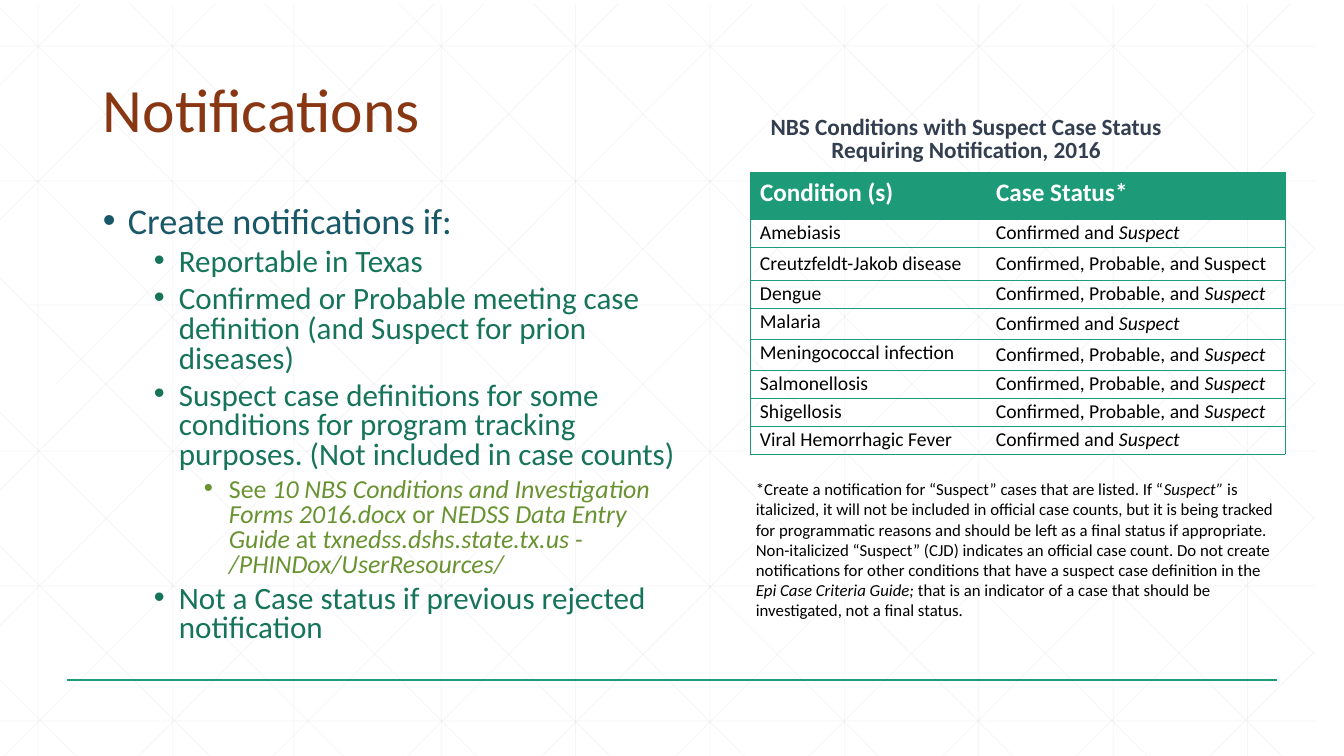
from lxml.etree import SubElement
from pptx import Presentation
from pptx.dml.color import RGBColor
from pptx.enum.shapes import MSO_CONNECTOR
from pptx.enum.text import MSO_ANCHOR, PP_ALIGN
from pptx.oxml.ns import qn
from pptx.util import Pt

WIDTH, HEIGHT = 1344, 756
SCALE = 12192000 / WIDTH
FONT = "Calibri"
COLORS = {
    "grid": "D9D9D9", "accent": "1D9A78", "title": "893713", "caption": "333F50",
    "level0": "195869", "level1": "16745A", "level2": "699331",
    "white": "FFFFFF", "black": "000000",
}
GRID_LEFT, GRID_RIGHT, GRID_TOP, GRID_BOTTOM = -29, 1315, 4, 760
GRID_STEP = 134.4
LEVELS = [(25, 25.9, "level0"), (76, 22.2, "level1"), (126, 18.5, "level2")]
BULLETS = [
    (0, "Create notifications if:"),
    (1, "Reportable in Texas"),
    (1, "Confirmed or Probable meeting case definition (and Suspect for prion diseases)"),
    (1, "Suspect case definitions for some conditions for program tracking purposes. "
        "(Not included in case counts)"),
    (2, "See |10 NBS Conditions and Investigation Forms 2016.docx| or "
        "|NEDSS Data Entry Guide| at |txnedss.dshs.state.tx.us - /PHINDox/UserResources/"),
    (1, "Not a Case status if previous rejected notification"),
]
SUSPECT = "Confirmed and |Suspect"
PROBABLE = "Confirmed, Probable, and |Suspect"
CONDITIONS = [
    ("Condition (s)", "Case Status*", 47),
    ("Amebiasis", SUSPECT, 28),
    ("Creutzfeldt-Jakob disease", "Confirmed, Probable, and Suspect", 33),
    ("Dengue", PROBABLE, 28),
    ("Malaria", SUSPECT, 31),
    ("Meningococcal infection", PROBABLE, 31),
    ("Salmonellosis", PROBABLE, 28),
    ("Shigellosis", PROBABLE, 28),
    ("Viral Hemorrhagic Fever", SUSPECT, 28),
]
RAISED = ("Malaria", "Meningococcal infection")
FOOTNOTE = (
    "*Create a notification for “Suspect” cases that are listed. If “|Suspect”| is italicized, "
    "it will not be included in official case counts, but it is being tracked for programmatic "
    "reasons and should be left as a final status if appropriate. Non-italicized “Suspect” (CJD) "
    "indicates an official case count. Do not create notifications for other conditions that "
    "have a suspect case definition in the |Epi Case Criteria Guide;| that is an indicator of a "
    "case that should be investigated, not a final status."
)


def px(length):
    """Turn pixels into EMU."""
    return round(length * SCALE)


def color(name):
    """Look up a named colour."""
    return RGBColor.from_string(COLORS[name])


def add_line(slide, start, end, name, width, opacity=100):
    """Draw a straight line without a shadow."""
    line = slide.shapes.add_connector(
        MSO_CONNECTOR.STRAIGHT, *(px(value) for value in (*start, *end)))
    line.line.color.rgb = color(name)
    line.line.width = Pt(width)
    if opacity < 100:
        solid = line.line._get_or_add_ln().find(qn("a:solidFill"))
        SubElement(solid[0], qn("a:alpha"), val=str(opacity * 1000))
    SubElement(line._element.spPr, qn("a:effectLst"))


def write(paragraph, text, size, name, bold=False):
    """Fill a paragraph, switching italics at each bar."""
    font = paragraph.font
    font.name, font.size, font.bold = FONT, Pt(size), bold
    font.color.rgb = color(name)
    for index, part in enumerate(text.split("|")):
        for order, piece in enumerate(part.split("\n")):
            if order:
                paragraph.add_line_break()
            run = paragraph.add_run()
            run.text = piece
            if index % 2:
                run.font.italic = True


def add_text_frame(slide, box):
    """Add a wrapping text box and return its frame."""
    frame = slide.shapes.add_textbox(*(px(value) for value in box)).text_frame
    frame.word_wrap = True
    return frame


def add_grid(slide):
    """Draw the faint background lattice."""
    lines = []
    for index in range(10):
        x = 38 + GRID_STEP * index - (13 if index == 2 else 0)
        lines.append(((x, GRID_TOP), (x, GRID_BOTTOM)))
    for index in range(6):
        shift = 57 if index == 2 else 0
        y = 46 + 135 * index - (11 if index == 2 else 0)
        lines.append(((GRID_LEFT + shift, y), (GRID_RIGHT + shift, y)))
    diagonals = []
    for index in range(10):
        x = -4 + GRID_STEP * index
        reach = min(752, GRID_RIGHT - x)
        diagonals.append(((x, GRID_TOP), (x + reach, GRID_TOP + reach * 756 / 752)))
    for index in range(5):
        diagonals.append(((GRID_LEFT, 115 + 134 * index), (614 - 133.5 * index, GRID_BOTTOM)))
    lines += diagonals
    for index, (start, end) in enumerate(diagonals):
        axis = GRID_LEFT + GRID_RIGHT + (85 if index == 7 else 0)
        lines.append(((axis - start[0], start[1]), (axis - end[0], end[1])))
    for start, end in lines:
        add_line(slide, start, end, "grid", 0.5, 25)


def add_title(slide, box):
    """Place the slide title."""
    frame = add_text_frame(slide, box)
    frame.vertical_anchor = MSO_ANCHOR.MIDDLE
    frame.paragraphs[0].line_spacing = 0.9
    write(frame.paragraphs[0], "Notifications", 44, "title")


def add_bullets(slide, box):
    """Place the bulleted list."""
    frame = add_text_frame(slide, box)
    for index, (level, text) in enumerate(BULLETS):
        paragraph = frame.add_paragraph() if index else frame.paragraphs[0]
        indent, size, name = LEVELS[level]
        paragraph.level = level
        paragraph.line_spacing = 0.8
        if index:
            paragraph.space_before = Pt(5)
        properties = paragraph._p.get_or_add_pPr()
        properties.set("marL", str(px(indent)))
        properties.set("indent", str(px(-25)))
        SubElement(properties, qn("a:buFont"), typeface="Arial")
        SubElement(properties, qn("a:buChar"), char="•")
        write(paragraph, text, size, name)


def add_caption(slide, box):
    """Place the heading above the table."""
    paragraph = add_text_frame(slide, box).paragraphs[0]
    paragraph.alignment = PP_ALIGN.CENTER
    paragraph.line_spacing = 0.8
    write(paragraph, "NBS Conditions with Suspect Case Status\nRequiring Notification, 2016",
          16.6, "caption", True)


def set_borders(cell, visible):
    """Rule the named sides of a cell and clear the others."""
    properties = cell._tc.get_or_add_tcPr()
    for side in "LRTB":
        border = SubElement(properties, qn(f"a:ln{side}"), w=str(Pt(0.5)))
        if side in visible:
            solid = SubElement(border, qn("a:solidFill"))
            SubElement(solid, qn("a:srgbClr"), val=COLORS["accent"])
        else:
            SubElement(border, qn("a:noFill"))


def add_conditions(slide, box):
    """Place the table of conditions and case statuses."""
    table = slide.shapes.add_table(
        len(CONDITIONS), 2, *(px(value) for value in box)).table
    table.horz_banding = False
    table.columns[0].width, table.columns[1].width = px(236), px(box[2] - 236)
    for row, (*texts, height) in enumerate(CONDITIONS):
        table.rows[row].height = px(height)
        for column, text in enumerate(texts):
            cell = table.cell(row, column)
            set_borders(cell, "TBR" if column else "TBL")
            paragraph = cell.text_frame.paragraphs[0]
            if row == 0:
                cell.fill.solid()
                cell.fill.fore_color.rgb = color("accent")
                write(paragraph, text, 18, "white", True)
                continue
            cell.fill.background()
            cell.vertical_anchor = MSO_ANCHOR.MIDDLE
            cell.margin_left = cell.margin_top = px(10)
            cell.margin_right = px(4)
            cell.margin_bottom = px(5 if text in RAISED else 1)
            paragraph.line_spacing = Pt(11)
            write(paragraph, text, 14, "black")


def add_footnote(slide, box):
    """Place the note below the table."""
    write(add_text_frame(slide, box).paragraphs[0], FOOTNOTE, 12, "black")


def main():
    """Build and save the slide."""
    presentation = Presentation()
    presentation.slide_width, presentation.slide_height = px(WIDTH), px(HEIGHT)
    slide = presentation.slides.add_slide(presentation.slide_layouts[6])
    add_grid(slide)
    add_line(slide, (67, 680), (1277, 680), "accent", 1)
    add_caption(slide, (680, 113, 572, 58))
    add_title(slide, (93, 40, 587, 146))
    add_bullets(slide, (93, 202, 605, 480))
    add_conditions(slide, (750, 172, 535, 282))
    add_footnote(slide, (746, 474, 539, 152))
    presentation.save("out.pptx")


if __name__ == "__main__":
    main()
